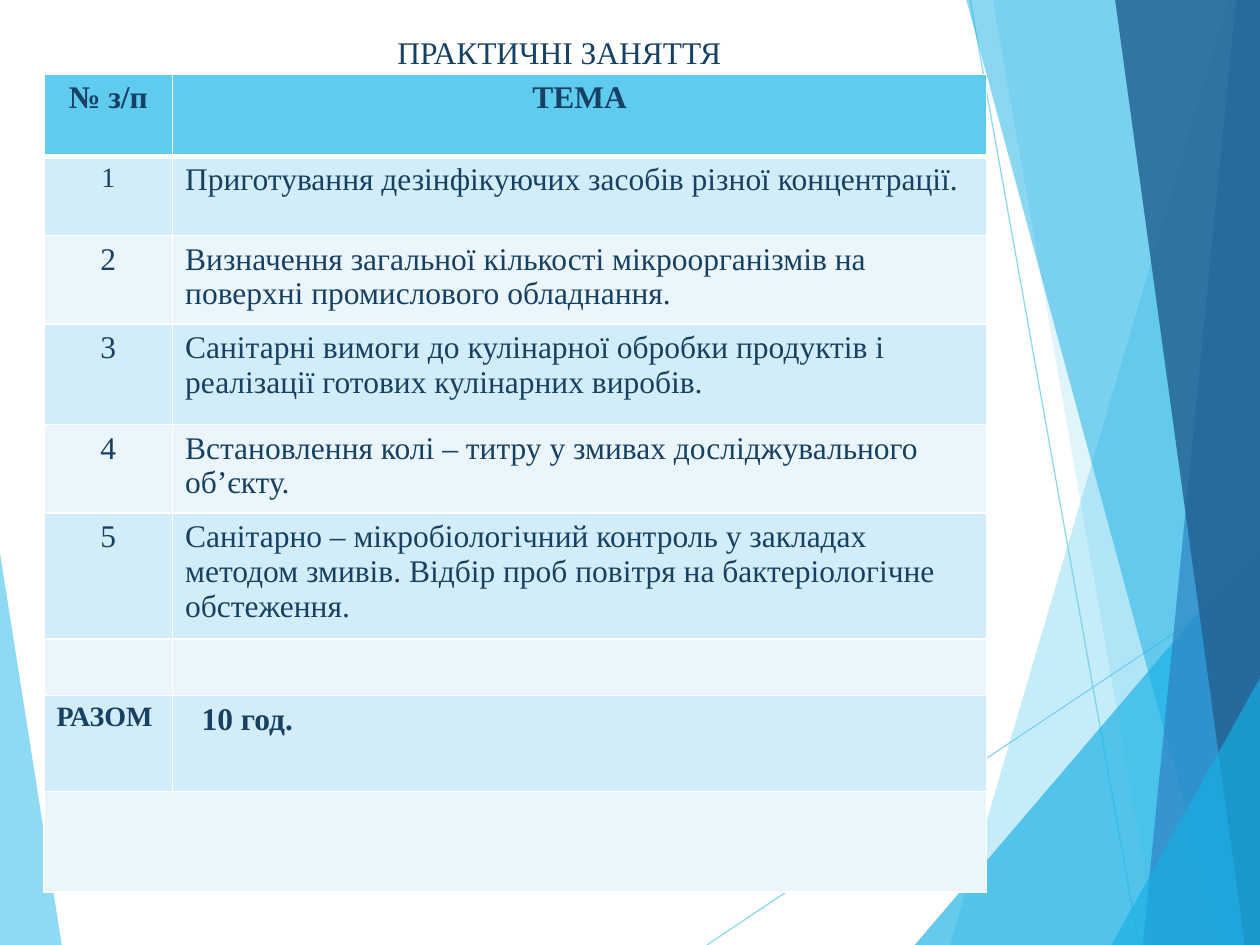
"""Build a slide listing the practical classes over a faceted blue backdrop."""
from dataclasses import dataclass

from pptx import Presentation
from pptx.dml.color import RGBColor
from pptx.enum.shapes import MSO_CONNECTOR as Connector
from pptx.enum.text import MSO_ANCHOR as Anchor, MSO_AUTO_SIZE as AutoSize, PP_ALIGN as Align
from pptx.oxml.ns import qn
from pptx.oxml.xmlchemy import OxmlElement
from pptx.util import Inches, Pt

COLORS = {
    "sky": "5FCBEF", "cyan": "17B0E4", "blue": "2E83C3", "navy": "226292",
    "text": "174162", "odd": "D2ECF9", "even": "EAF6FC", "border": "FFFFFF",
}
FONT = "Times New Roman"
COLUMN_WIDTHS = (1.02, 6.46)


@dataclass(frozen=True)
class Band:
    color: str
    opacity: int
    points: tuple


@dataclass(frozen=True)
class Ray:
    start: tuple
    end: tuple
    color: str = "sky"
    opacity: int = 70


@dataclass(frozen=True)
class Row:
    height: float
    number: str = ""
    topic: str = ""
    number_size: int = 18
    bold: bool = False
    number_align: Align = Align.CENTER
    topic_align: Align = Align.LEFT
    topic_indent: float = 0.1


BACKDROP = (
    Band("sky", 70, ((0, 4.39), (0.49, 7.5), (0, 7.5))),
    Ray((5.61, 7.5), (10, 4.57)),
    Ray((7.7, 0), (9.04, 7.5)),
    Band("sky", 36, ((9.75, 0), (7.54, 7.5), (10, 7.5), (10, 0))),
    Band("sky", 20, ((7.88, 0), (9.19, 7.5), (10, 7.5), (10, 0))),
    Band("cyan", 66, ((7.26, 7.5), (10, 4.29), (10, 7.5))),
    Band("cyan", 50, ((7.67, 0), (9.7, 7.5), (10, 7.5), (10, 0))),
    Band("blue", 70, ((9.81, 0), (9.07, 7.5), (10, 7.5), (10, 0))),
    Band("navy", 82, ((8.85, 0), (9.88, 7.5), (10, 7.5), (10, 0))),
    Band("cyan", 66, ((8.82, 7.5), (10, 5.38), (10, 7.5))),
)

ROWS = (
    Row(0.65, "№ з/п", "ТЕМА", bold=True, topic_align=Align.CENTER),
    Row(0.63, "1", "Приготування дезінфікуючих засобів різної концентрації.", number_size=16),
    Row(0.65, "2", "Визначення загальної кількості мікроорганізмів на поверхні "
        "промислового обладнання."),
    Row(0.8, "3", "Санітарні вимоги до кулінарної обробки продуктів і реалізації "
        "готових кулінарних виробів."),
    Row(0.65, "4", "Встановлення колі – титру у змивах досліджувального об’єкту."),
    Row(0.93, "5", "Санітарно – мікробіологічний контроль у закладах методом змивів. "
        "Відбір проб повітря на бактеріологічне обстеження."),
    Row(0.45),
    Row(0.76, "РАЗОМ", "10 год.", number_size=16, bold=True,
        number_align=Align.LEFT, topic_indent=0.23),
    Row(0.8),
)


def rgb(name: str) -> RGBColor:
    return RGBColor.from_string(COLORS[name])


def set_opacity(shape, percent: int) -> None:
    for color in shape._element.spPr.iter(qn("a:srgbClr")):
        alpha = OxmlElement("a:alpha")
        alpha.set("val", str(percent * 1000))
        color.append(alpha)


def draw_band(slide, band: Band) -> None:
    start, *rest = [(Inches(x), Inches(y)) for x, y in band.points]
    builder = slide.shapes.build_freeform(*start)
    builder.add_line_segments(rest, close=True)
    shape = builder.convert_to_shape()
    shape.shadow.inherit = False
    shape.fill.solid()
    shape.fill.fore_color.rgb = rgb(band.color)
    shape.line.fill.background()
    set_opacity(shape, band.opacity)


def draw_ray(slide, ray: Ray) -> None:
    ends = [Inches(value) for value in ray.start + ray.end]
    connector = slide.shapes.add_connector(Connector.STRAIGHT, *ends)
    connector.line.width = Pt(0.75)
    connector.line.color.rgb = rgb(ray.color)
    connector._element.spPr.append(OxmlElement("a:effectLst"))
    set_opacity(connector, ray.opacity)


def write_text(frame, text: str, size: int, bold: bool, align: Align) -> None:
    para = frame.paragraphs[0]
    para.alignment = align
    if not text:
        para.font.size = Pt(size)
        return
    span = para.add_run()
    span.text = text
    for name, value in {"name": FONT, "size": Pt(size), "bold": bold}.items():
        setattr(span.font, name, value)
    span.font.color.rgb = rgb("text")


def add_border(cell, side: str, width: float) -> None:
    line = OxmlElement(f"a:ln{side}")
    line.set("w", str(Pt(width)))
    fill = OxmlElement("a:solidFill")
    color = OxmlElement("a:srgbClr")
    color.set("val", COLORS["border"])
    fill.append(color)
    line.append(fill)
    cell._tc.get_or_add_tcPr().append(line)


def format_cell(cell, row_index: int) -> None:
    widths = {"L": 1, "R": 1, "T": 3 if row_index == 1 else 1, "B": 3 if row_index == 0 else 1}
    for side, width in widths.items():
        add_border(cell, side, width)
    cell.fill.solid()
    stripe = "odd" if row_index % 2 else "even"
    cell.fill.fore_color.rgb = rgb("sky" if row_index == 0 else stripe)


def draw_table(slide) -> None:
    box = [Inches(value) for value in
           (0.35, 0.59, sum(COLUMN_WIDTHS), sum(row.height for row in ROWS))]
    table = slide.shapes.add_table(len(ROWS), len(COLUMN_WIDTHS), *box).table
    for column, width in zip(table.columns, COLUMN_WIDTHS):
        column.width = Inches(width)
    for index, row in enumerate(ROWS):
        table.rows[index].height = Inches(row.height)
        number, topic = table.cell(index, 0), table.cell(index, 1)
        for cell in (number, topic):
            format_cell(cell, index)
        write_text(number.text_frame, row.number, row.number_size, row.bold, row.number_align)
        write_text(topic.text_frame, row.topic, 18, row.bold, row.topic_align)
        topic.margin_left = Inches(row.topic_indent)
    last = len(ROWS) - 1
    table.cell(last, 0).merge(table.cell(last, 1))


def draw_title(slide) -> None:
    title = slide.shapes.title
    place = {"left": 1.93, "top": 0.21, "width": 5.02, "height": 0.4}
    for name, value in place.items():
        setattr(title, name, Inches(value))
    frame = title.text_frame
    layout = {"word_wrap": True, "vertical_anchor": Anchor.TOP,
              "auto_size": AutoSize.SHAPE_TO_FIT_TEXT}
    for name, value in layout.items():
        setattr(frame, name, value)
    write_text(frame, "ПРАКТИЧНІ ЗАНЯТТЯ", 18, False, Align.CENTER)


def main() -> None:
    deck = Presentation()
    deck.slide_width, deck.slide_height = Inches(10), Inches(7.5)
    page = deck.slides.add_slide(deck.slide_layouts[5])
    for item in BACKDROP:
        if isinstance(item, Band):
            draw_band(page, item)
        else:
            draw_ray(page, item)
    draw_table(page)
    draw_title(page)
    deck.save("out.pptx")


if __name__ == "__main__":
    main()
